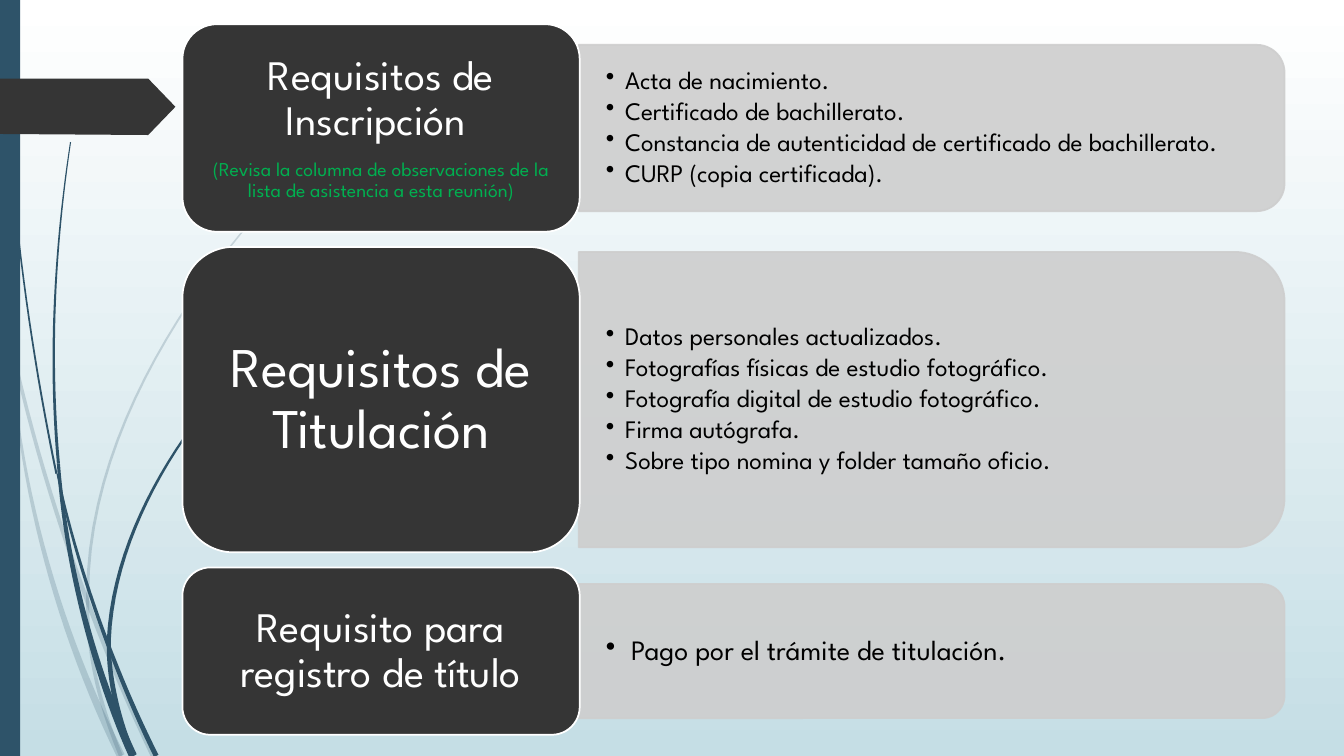
from math import hypot

from lxml import etree
from pptx import Presentation
from pptx import util as u
from pptx.dml.color import RGBColor
from pptx.enum import shapes, text
from pptx.oxml.ns import qn

FONT = "League Spartan"
BLUE, DARK, GREY, WHITE, BLACK, GREEN = "2E5369", "353535", "CECECE", "FFFFFF", "000000", "00B050"
CORNER_INSET = 0.05

PALE_BLADES = [
    ((0, 2.85), (0.3, 4.5), (0.85, 6.1), (1.52, 7.5), 0.03, 0.05),
    ((0.11, 3.5), (0.2, 4.9), (0.6, 6.3), (1.2, 7.5), 0.01, 0.08),
    ((3.12, 1.53), (2.2, 2.4), (0.87, 4.1), (0.87, 5.9), 0.01, 0.03),
    ((0.87, 5.9), (0.86, 6.4), (0.95, 6.9), (1.2, 7.5), 0.03, 0.04),
]
SOLID_BLADES = [
    ((0.04, 0), (0.05, 1.6), (0.25, 3.2), (0.56, 4.7), 0.01, 0.02),
    ((0.57, 4.7), (0.75, 5.6), (1.15, 6.7), (1.55, 7.5), 0.02, 0.05),
    ((0.7, 1.41), (0.55, 2.4), (0.48, 3.5), (0.58, 4.6), 0.01, 0.03),
    ((0.58, 4.6), (0.65, 5.6), (0.95, 6.7), (1.32, 7.5), 0.03, 0.08),
    ((2.6, 3.44), (1.9, 4.1), (1.13, 5.2), (1.08, 6.35), 0.01, 0.04),
    ((1.08, 6.35), (1.07, 6.7), (1.17, 7.15), (1.32, 7.5), 0.04, 0.06),
]
TAG = [(0, 0.78), (1.47, 0.78), (1.74, 1.06), (1.47, 1.34), (0, 1.33)]
ROWS = [
    (0.24, 2.06, 1.65, 0.12, [("Requisitos de Inscripción ", 30, WHITE),
     ("(Revisa la columna de observaciones de la lista de asistencia a esta reunión)", 14, GREEN)],
     18, 0.19, ["Acta de nacimiento.", "Certificado de bachillerato.",
                "Constancia de autenticidad de certificado de bachillerato.", "CURP (copia certificada)."]),
    (2.45, 3.03, 2.93, 0.17, [("Requisitos de Titulación", 40, WHITE)],
     18, 0.19, ["Datos personales actualizados.", "Fotografías físicas de estudio fotográfico.",
                "Fotografía digital de estudio fotográfico.", "Firma autógrafa.",
                "Sobre tipo nomina y folder tamaño oficio."]),
    (5.63, 1.66, 1.33, 0.12, [("Requisito para registro de título", 30, WHITE)],
     20, 0.25, ["Pago por el trámite de titulación."]),
]


def rgb(color):
    """Turn a hex string into a colour."""
    return RGBColor.from_string(color)


def paint(sp, fill, line=None, alpha=100):
    """Set fill, outline and opacity of a shape and drop its shadow."""
    sp.shadow.inherit = False
    sp.fill.solid()
    sp.fill.fore_color.rgb = rgb(fill)
    if line:
        sp.line.color.rgb, sp.line.width = rgb(line), u.Pt(1.25)
    else:
        sp.line.fill.background()
    if alpha < 100:
        for clr in sp.element.spPr.iter(qn("a:srgbClr")):
            etree.SubElement(clr, qn("a:alpha")).set("val", str(alpha * 1000))


def outline(s, points, color, alpha=100):
    """Draw a closed filled outline through points in inches."""
    pts = [(u.Inches(x), u.Inches(y)) for x, y in points]
    fb = s.shapes.build_freeform(*pts[0])
    fb.add_line_segments(pts[1:], close=True)
    paint(fb.convert_to_shape(), color, alpha=alpha)


def blade_points(a, b, c, d, start_w, end_w, steps=24):
    """Return the outline of a cubic curve whose width changes along it."""
    near, far = [], []
    for t in (n / steps for n in range(steps + 1)):
        q = 1 - t
        x, y = (q ** 3 * a[k] + 3 * q * q * t * b[k] + 3 * q * t * t * c[k] + t ** 3 * d[k] for k in (0, 1))
        dx, dy = (q * q * (b[k] - a[k]) + 2 * q * t * (c[k] - b[k]) + t * t * (d[k] - c[k]) for k in (0, 1))
        half = (start_w * q + end_w * t) / 2 / hypot(dx, dy)
        near.append((x - dy * half, y + dx * half))
        far.append((x + dy * half, y - dx * half))
    return near + far[::-1]


def setup_frame(tf, side):
    """Wrap and centre a text frame vertically, with insets in inches."""
    tf.word_wrap, tf.vertical_anchor = True, text.MSO_ANCHOR.MIDDLE
    tf.margin_left = tf.margin_right = u.Inches(side)
    tf.margin_top = tf.margin_bottom = u.Inches(side / 2)


def write(tf, i, words, size, color, after, align=text.PP_ALIGN.LEFT, hang=0):
    """Write paragraph i, bulleted when it has a hanging indent."""
    p = tf.add_paragraph() if i else tf.paragraphs[0]
    p.alignment, p.line_spacing, p.space_after = align, 0.9, u.Pt(size * after)
    if hang:
        pPr = p._p.get_or_add_pPr()
        pPr.set("marL", str(u.Inches(hang)))
        pPr.set("indent", str(-u.Inches(hang)))
        etree.SubElement(pPr, qn("a:buChar")).set("char", "•")
    r = p.add_run()
    r.text, r.font.size, r.font.name, r.font.color.rgb = words, u.Pt(size), FONT, rgb(color)


def backdrop(s):
    """Draw the gradient, the blades, the side bar and the tag."""
    fill = s.background.fill
    fill.gradient()
    fill.gradient_angle = 270
    for stop, color in zip(fill.gradient_stops, (WHITE, "C5DEE5")):
        stop.color.rgb = rgb(color)
    for blades, alpha in ((PALE_BLADES, 20), (SOLID_BLADES, 100)):
        for blade in blades:
            outline(s, blade_points(*blade), BLUE, alpha)
    paint(s.shapes.add_shape(shapes.MSO_SHAPE.RECTANGLE, 0, 0, u.Inches(0.2), u.Inches(7.5)), BLUE)
    outline(s, TAG, DARK)


def requirement_row(s, x, y, h, panel_h, inset, heading, size, hang, items, card_w=3.94, panel_w=7):
    """Draw a heading card with its panel of bullets to the right."""
    left, mid, e = x + card_w - 0.01, y + h / 2, CORNER_INSET * panel_h
    sp = s.shapes.add_shape(shapes.MSO_SHAPE.ROUND_2_SAME_RECTANGLE, u.Inches(left + (panel_w - panel_h) / 2),
                            u.Inches(mid - panel_w / 2), u.Inches(panel_h), u.Inches(panel_w))
    sp.rotation = 90
    paint(sp, GREY, GREY, 90)
    tf = s.shapes.add_textbox(u.Inches(left), u.Inches(mid - panel_h / 2 + e),
                              u.Inches(panel_w - e), u.Inches(panel_h - 2 * e)).text_frame
    setup_frame(tf, 0.27)
    for i, item in enumerate(items):
        write(tf, i, item, size, BLACK, 0.15, hang=hang)
    sp = s.shapes.add_shape(shapes.MSO_SHAPE.ROUNDED_RECTANGLE, *map(u.Inches, (x, y, card_w, h)))
    paint(sp, DARK, WHITE)
    setup_frame(sp.text_frame, inset)
    for i, (words, pt, color) in enumerate(heading):
        write(sp.text_frame, i, words, pt, color, 0.35, text.PP_ALIGN.CENTER)


def main():
    """Build and save the slide."""
    prs = Presentation()
    prs.slide_width, prs.slide_height = u.Inches(13.33), u.Inches(7.5)
    s = prs.slides.add_slide(prs.slide_layouts[6])
    backdrop(s)
    for row in ROWS:
        requirement_row(s, 1.81, *row)
    prs.save("out.pptx")


if __name__ == "__main__":
    main()
